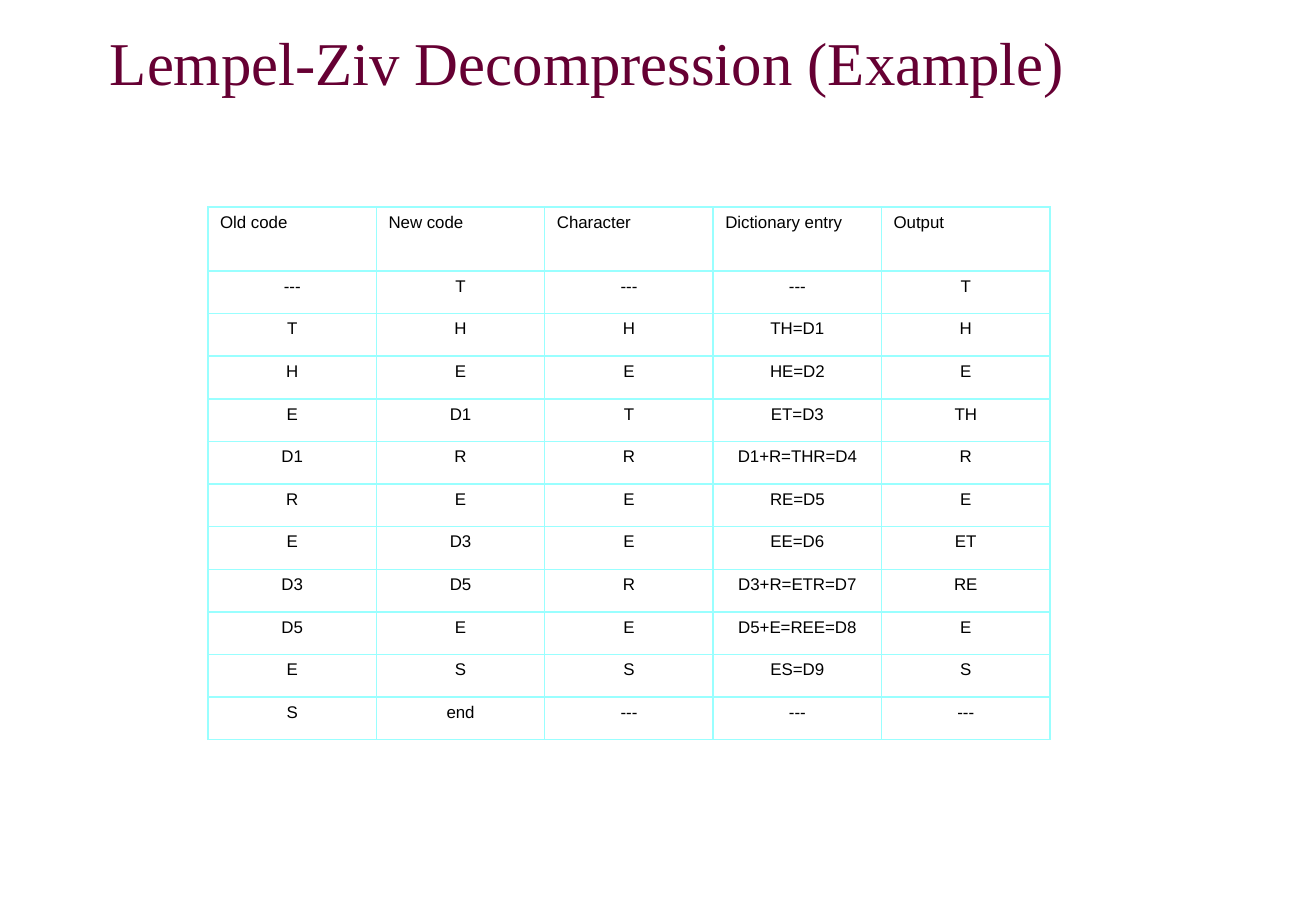
"""Build the Lempel-Ziv decompression example slide."""
from lxml import etree
from pptx import Presentation
from pptx.dml.color import RGBColor
from pptx.enum.text import MSO_ANCHOR, PP_ALIGN
from pptx.oxml.ns import qn
from pptx.util import Pt

LEFT, CENTER = PP_ALIGN.LEFT, PP_ALIGN.CENTER
TOP, MIDDLE = MSO_ANCHOR.TOP, MSO_ANCHOR.MIDDLE
EMU_PER_PX = 914400 / 121.5
COLORS = {"title": "660033", "text": "000000", "grid": "99FFFF", "cell": "FFFFFF"}
FORMATS = {
    "title": {"name": "Times New Roman", "size": Pt(36)},
    "text": {"name": "Arial", "size": Pt(10)},
}
HEADINGS = ["Old code", "New code", "Character", "Dictionary entry", "Output"]
STEPS = [
    ["---", "T", "---", "---", "T"],
    ["T", "H", "H", "TH=D1", "H"],
    ["H", "E", "E", "HE=D2", "E"],
    ["E", "D1", "T", "ET=D3", "TH"],
    ["D1", "R", "R", "D1+R=THR=D4", "R"],
    ["R", "E", "E", "RE=D5", "E"],
    ["E", "D3", "E", "EE=D6", "ET"],
    ["D3", "D5", "R", "D3+R=ETR=D7", "RE"],
    ["D5", "E", "E", "D5+E=REE=D8", "E"],
    ["E", "S", "S", "ES=D9", "S"],
    ["S", "end", "---", "---", "---"],
]


def px(length):
    return round(length * EMU_PER_PX)


class SlideBuilder:
    def __init__(self, slide):
        self.slide = slide

    def add_text(self, frame, text, role, align):
        paragraph = frame.paragraphs[0]
        paragraph.alignment = align
        run = paragraph.add_run()
        run.text = text
        for attribute, value in FORMATS[role].items():
            setattr(run.font, attribute, value)
        run.font.color.rgb = RGBColor.from_string(COLORS[role])

    def title(self, text, *box):
        frame = self.slide.shapes.add_textbox(*map(px, box)).text_frame
        frame.word_wrap = True
        frame.vertical_anchor = MIDDLE
        self.add_text(frame, text, "title", LEFT)

    def border(self, cell):
        properties = cell._tc.get_or_add_tcPr()
        for side in ("lnL", "lnR", "lnT", "lnB"):
            line = etree.SubElement(properties, qn(f"a:{side}"), w=str(Pt(1)))
            fill = etree.SubElement(line, qn("a:solidFill"))
            etree.SubElement(fill, qn("a:srgbClr"), val=COLORS["grid"])

    def table(self, headings, steps, left, top, width, heading_height, steps_height):
        rows = [headings, *steps]
        table = self.slide.shapes.add_table(
            len(rows), len(headings), px(left), px(top), px(width),
            px(heading_height + steps_height)).table
        table.first_row = table.horz_banding = False
        for column in table.columns:
            column.width = px(width / len(headings))
        for index, (row, values) in enumerate(zip(table.rows, rows)):
            row.height = px(steps_height / len(steps) if index else heading_height)
            for cell, value in zip(row.cells, values):
                self.border(cell)
                cell.fill.solid()
                cell.fill.fore_color.rgb = RGBColor.from_string(COLORS["cell"])
                cell.vertical_anchor = TOP
                self.add_text(cell.text_frame, value, "text", CENTER if index else LEFT)


def main():
    deck = Presentation()
    deck.slide_width, deck.slide_height = px(1316), px(911)
    builder = SlideBuilder(deck.slides.add_slide(deck.slide_layouts[6]))
    builder.title("Lempel-Ziv Decompression (Example)", 98, 0, 1119, 122)
    builder.table(HEADINGS, STEPS, 208, 207, 842, 64, 469)
    deck.save("out.pptx")


if __name__ == "__main__":
    main()
